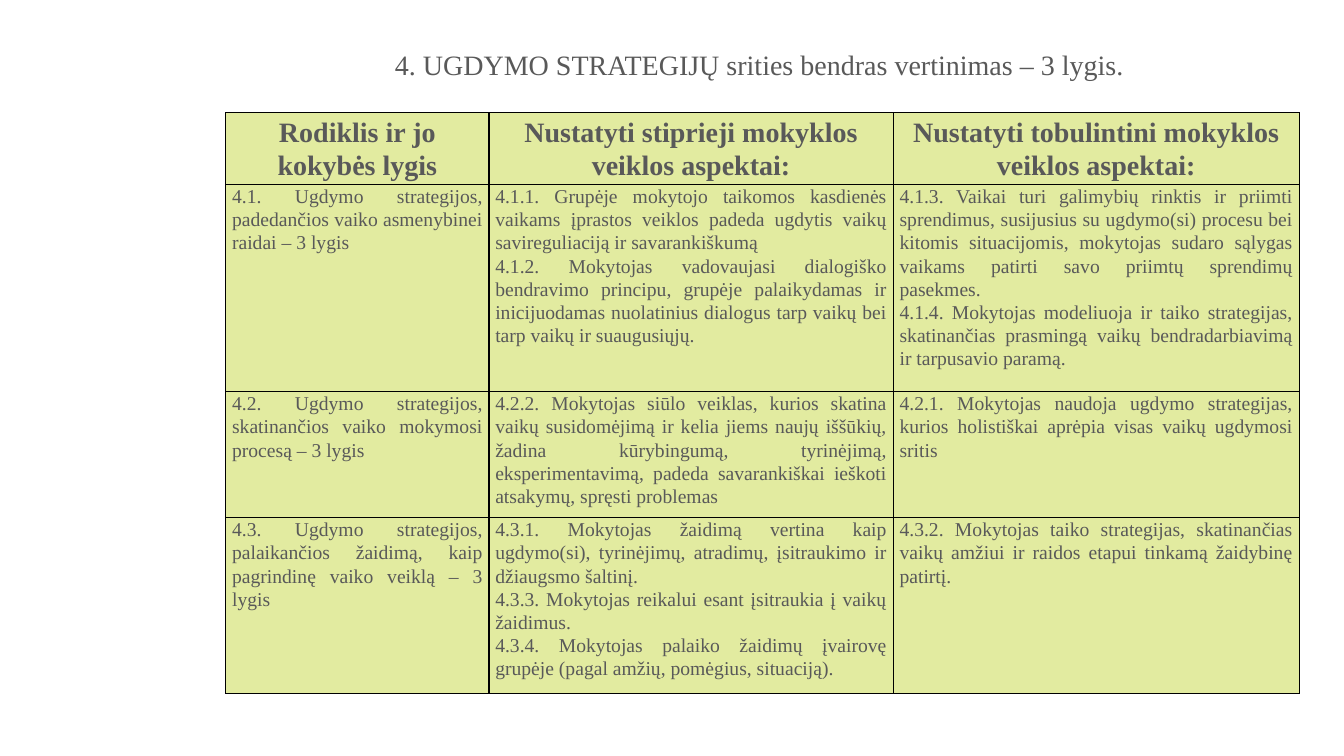
from lxml.etree import SubElement
from pptx import Presentation
from pptx.dml.color import RGBColor as Rgb
from pptx.enum.text import MSO_ANCHOR as Anchor, PP_ALIGN as Align
from pptx.oxml.ns import qn
from pptx.util import Pt

HUES = {"text": "595959", "fill": "E2EBA0", "line": "000000"}
FONT = "Times New Roman"
COLS = [188, 288.8, 290]
ROWS = [46, 148, 82, 115]
HEAD = [
    "Rodiklis ir jo kokybės lygis",
    "Nustatyti stiprieji mokyklos veiklos aspektai:",
    "Nustatyti tobulintini mokyklos veiklos aspektai:",
]
# Each body cell is a list of paragraphs.
BODY = [
    [
        ["4.1. Ugdymo strategijos, padedančios vaiko asmenybinei raidai – 3 lygis"],
        ["4.1.1. Grupėje mokytojo taikomos kasdienės vaikams įprastos veiklos padeda "
         "ugdytis vaikų savireguliaciją ir savarankiškumą",
         "4.1.2. Mokytojas vadovaujasi dialogiško bendravimo principu, grupėje "
         "palaikydamas ir inicijuodamas nuolatinius dialogus tarp vaikų bei tarp "
         "vaikų ir suaugusiųjų."],
        ["4.1.3. Vaikai turi galimybių rinktis ir priimti sprendimus, susijusius su "
         "ugdymo(si) procesu bei kitomis situacijomis, mokytojas sudaro sąlygas "
         "vaikams patirti savo priimtų sprendimų pasekmes.",
         "4.1.4. Mokytojas modeliuoja ir taiko strategijas, skatinančias prasmingą "
         "vaikų bendradarbiavimą ir tarpusavio paramą."],
    ],
    [
        ["4.2. Ugdymo strategijos, skatinančios vaiko mokymosi procesą – 3 lygis"],
        ["4.2.2. Mokytojas siūlo veiklas, kurios skatina vaikų susidomėjimą ir kelia "
         "jiems naujų iššūkių, žadina kūrybingumą, tyrinėjimą, eksperimentavimą, "
         "padeda savarankiškai ieškoti atsakymų, spręsti problemas"],
        ["4.2.1. Mokytojas naudoja ugdymo strategijas, kurios holistiškai aprėpia "
         "visas vaikų ugdymosi sritis"],
    ],
    [
        ["4.3. Ugdymo strategijos, palaikančios žaidimą, kaip pagrindinę vaiko "
         "veiklą – 3 lygis"],
        ["4.3.1. Mokytojas žaidimą vertina kaip ugdymo(si), tyrinėjimų, atradimų, "
         "įsitraukimo ir džiaugsmo šaltinį.",
         "4.3.3. Mokytojas reikalui esant įsitraukia į vaikų žaidimus.",
         "4.3.4. Mokytojas palaiko žaidimų įvairovę grupėje (pagal amžių, pomėgius, "
         "situaciją)."],
        ["4.3.2. Mokytojas taiko strategijas, skatinančias vaikų amžiui ir raidos "
         "etapui tinkamą žaidybinę patirtį."],
    ],
]


def write(frame, texts, size, align, space, bold=False):
    """Fill a text frame with one paragraph per text."""
    for i, text in enumerate(texts):
        para = frame.add_paragraph() if i else frame.paragraphs[0]
        para.alignment = align
        para.line_spacing = space
        run = para.add_run()
        run.text = text
        font = run.font
        font.name, font.size, font.bold = FONT, Pt(size), bold
        font.color.rgb = Rgb.from_string(HUES["text"])


def dress(cell):
    """Set the margins, borders and fill of a cell."""
    cell.margin_left = cell.margin_right = Pt(4.5)
    cell.margin_top = cell.margin_bottom = 0
    props = cell._tc.get_or_add_tcPr()
    for side in ("lnL", "lnR", "lnT", "lnB"):
        line = SubElement(props, qn("a:" + side), w=str(Pt(1)))
        paint = SubElement(line, qn("a:solidFill"))
        SubElement(paint, qn("a:srgbClr"), val=HUES["line"])
    cell.fill.solid()
    cell.fill.fore_color.rgb = Rgb.from_string(HUES["fill"])


deck = Presentation()
deck.slide_width, deck.slide_height = Pt(960), Pt(540)
slide = deck.slides.add_slide(deck.slide_layouts[6])

title = slide.shapes.add_textbox(Pt(173.5), Pt(24), Pt(738), Pt(78)).text_frame
title.word_wrap = True
title.vertical_anchor = Anchor.BOTTOM
title.margin_bottom = Pt(44)
write(title, ["4. UGDYMO STRATEGIJŲ srities bendras vertinimas – 3 lygis."],
      20, Align.CENTER, 0.9)

table = slide.shapes.add_table(len(ROWS), len(COLS), Pt(161.3), Pt(80.5),
                               Pt(sum(COLS)), Pt(sum(ROWS))).table
for col, width in zip(table.columns, COLS):
    col.width = Pt(width)
for row, height in zip(table.rows, ROWS):
    row.height = Pt(height)

for c, text in enumerate(HEAD):
    cell = table.cell(0, c)
    dress(cell)
    cell.vertical_anchor = Anchor.MIDDLE
    write(cell.text_frame, [text], 20, Align.CENTER, 1.07, True)

for r, line in enumerate(BODY, 1):
    for c, texts in enumerate(line):
        cell = table.cell(r, c)
        dress(cell)
        write(cell.text_frame, texts, 14, Align.JUSTIFY, 1.07)

deck.save("out.pptx")
